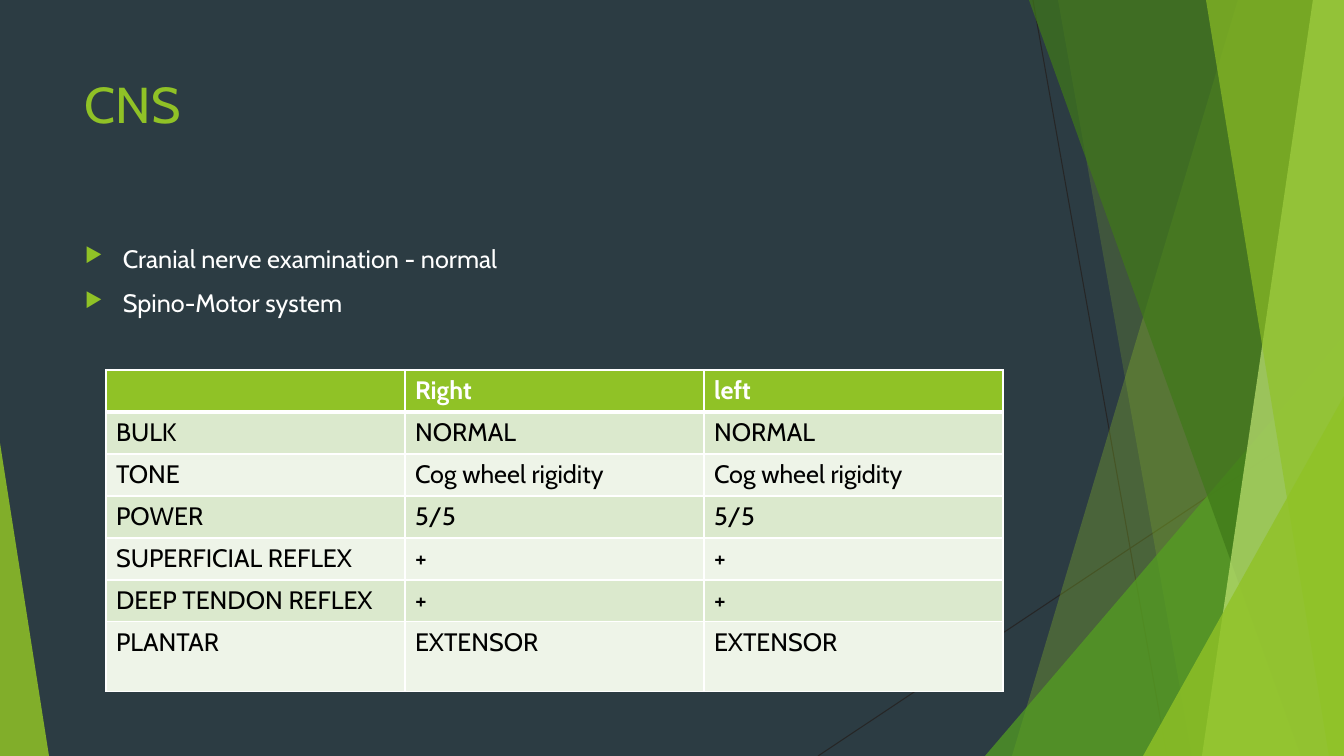
from lxml.etree import SubElement
from pptx import Presentation
from pptx.dml.color import RGBColor
from pptx.enum.shapes import MSO_CONNECTOR, MSO_SHAPE
from pptx.enum.text import MSO_ANCHOR
from pptx.oxml import parse_xml
from pptx.oxml.ns import nsdecls, qn
from pptx.util import Pt

# Content
TITLE = "CNS"
POINTS = ["Cranial nerve examination - normal", "Spino-Motor system"]
ROWS = [
    ("", "Right", "left"),
    ("BULK", "NORMAL", "NORMAL"),
    ("TONE", "Cog wheel rigidity", "Cog wheel rigidity"),
    ("POWER", "5/5", "5/5"),
    ("SUPERFICIAL REFLEX", "+", "+"),
    ("DEEP TENDON REFLEX", "+", "+"),
    ("PLANTAR", "EXTENSOR", "EXTENSOR"),
]

# Formats and places, in px
WIDE, HIGH = 1344, 756
UNIT = 914400 / 100.8
LIME, WHITE = "90C226", "FFFFFF"
HEAD = {"size": Pt(36), "bold": False, "name": "Cabin"}
BODY = {"size": Pt(18), "bold": False, "name": "Cabin"}
BOLD = {**BODY, "bold": True}
FRAME = {"word_wrap": True, "vertical_anchor": MSO_ANCHOR.TOP}
LINES = [(1033, 0, 1167, 756), (1344, 406, 818, 756)]
# A band is (top x, foot x) and runs to the right edge;
# a wedge is (left, top, width, height, apex)
SHARDS = [
    ((1238, 1012), LIME, 30),
    ((1058, 1192), LIME, 20),
    ((985, 336, 359, 420, 1), "54A021", 72),
    ((1029, 1301), "3F7819", 70),
    ((1313, 1202), "C0E474", 70),
    ((1206, 1329), LIME, 65),
    ((1143, 396, 201, 360, 1), LIME, 80),
    ((0, 443, 49, 313, 0), LIME, 85),
]
GRID = (106, 370)
COL, ROW, LAST = 299, 42, 70


def px(*vals):
    return [round(v * UNIT) for v in vals]


def hue(code):
    return RGBColor.from_string(code)


def style(obj, form):
    for key, val in form.items():
        setattr(obj, key, val)


def write(par, text, form, code):
    run = par.add_run()
    run.text = text
    style(run.font, form)
    run.font.color.rgb = hue(code)


def shard(place, code, alpha):
    if len(place) == 2:
        top, foot = place
        pen = shapes.build_freeform(top, 0, scale=UNIT)
        pen.add_line_segments([(WIDE, 0), (WIDE, HIGH), (foot, HIGH)])
        part = pen.convert_to_shape()
    else:
        part = shapes.add_shape(MSO_SHAPE.ISOSCELES_TRIANGLE, *px(*place[:4]))
        part.adjustments[0] = place[4]
    part.shadow.inherit = False
    part.line.fill.background()
    part.fill.solid()
    part.fill.fore_color.rgb = hue(code)
    tint = part._element.spPr.find(".//" + qn("a:srgbClr"))
    SubElement(tint, qn("a:alpha"), val=str(alpha * 1000))


def frame(*box):
    text = shapes.add_textbox(*px(*box)).text_frame
    style(text, FRAME)
    return text


def bullet(par):
    props = par._p.get_or_add_pPr()
    props.set("marL", str(px(38)[0]))
    props.set("indent", str(px(-38)[0]))
    tint = SubElement(props, qn("a:buClr"))
    SubElement(tint, qn("a:srgbClr"), val=LIME)
    SubElement(props, qn("a:buSzPct"), val="80000")
    SubElement(props, qn("a:buChar"), char="▶")


def border(cell, row):
    wide = {"T": 3 if row == 1 else 1, "B": 3 if row == 0 else 1}
    props = cell._tc.get_or_add_tcPr()
    for spot, side in enumerate("LRTB"):
        props.insert(spot, parse_xml(
            f'<a:ln{side} {nsdecls("a")} w="{Pt(wide.get(side, 1))}">'
            f'<a:solidFill><a:srgbClr val="{WHITE}"/></a:solidFill></a:ln{side}>'))


# Slide
deck = Presentation()
deck.slide_width, deck.slide_height = px(WIDE, HIGH)
slide = deck.slides.add_slide(deck.slide_layouts[6])
shapes = slide.shapes
slide.background.fill.solid()
slide.background.fill.fore_color.rgb = hue("2C3C43")

# Backdrop
for ends in LINES:
    line = shapes.add_connector(MSO_CONNECTOR.STRAIGHT, *px(*ends))
    line.line.width = Pt(0.75)
    line.line.color.rgb = hue("262626")
    SubElement(line._element.spPr, qn("a:effectLst"))
for item in SHARDS:
    shard(*item)

# Title and bullets
write(frame(75, 68, 948, 145).paragraphs[0], TITLE, HEAD, LIME)
body = frame(75, 238, 948, 427)
for num, text in enumerate(POINTS):
    par = body.add_paragraph() if num else body.paragraphs[0]
    par.space_before = Pt(10)
    bullet(par)
    write(par, text, BODY, WHITE)

# Table
highs = [ROW] * (len(ROWS) - 1) + [LAST]
size = (COL * len(ROWS[0]), sum(highs))
table = shapes.add_table(len(ROWS), len(ROWS[0]), *px(*GRID, *size)).table
for col in table.columns:
    col.width = px(COL)[0]
for num, (row, high) in enumerate(zip(ROWS, highs)):
    table.rows[num].height = px(high)[0]
    if num == 0:
        fill, form, ink = LIME, BOLD, WHITE
    else:
        fill, form, ink = ("EEF4E8", "DBE9CD")[num % 2], BODY, "000000"
    for spot, text in enumerate(row):
        cell = table.cell(num, spot)
        cell.fill.solid()
        cell.fill.fore_color.rgb = hue(fill)
        border(cell, num)
        if text:
            write(cell.text_frame.paragraphs[0], text, form, ink)

deck.save("out.pptx")
